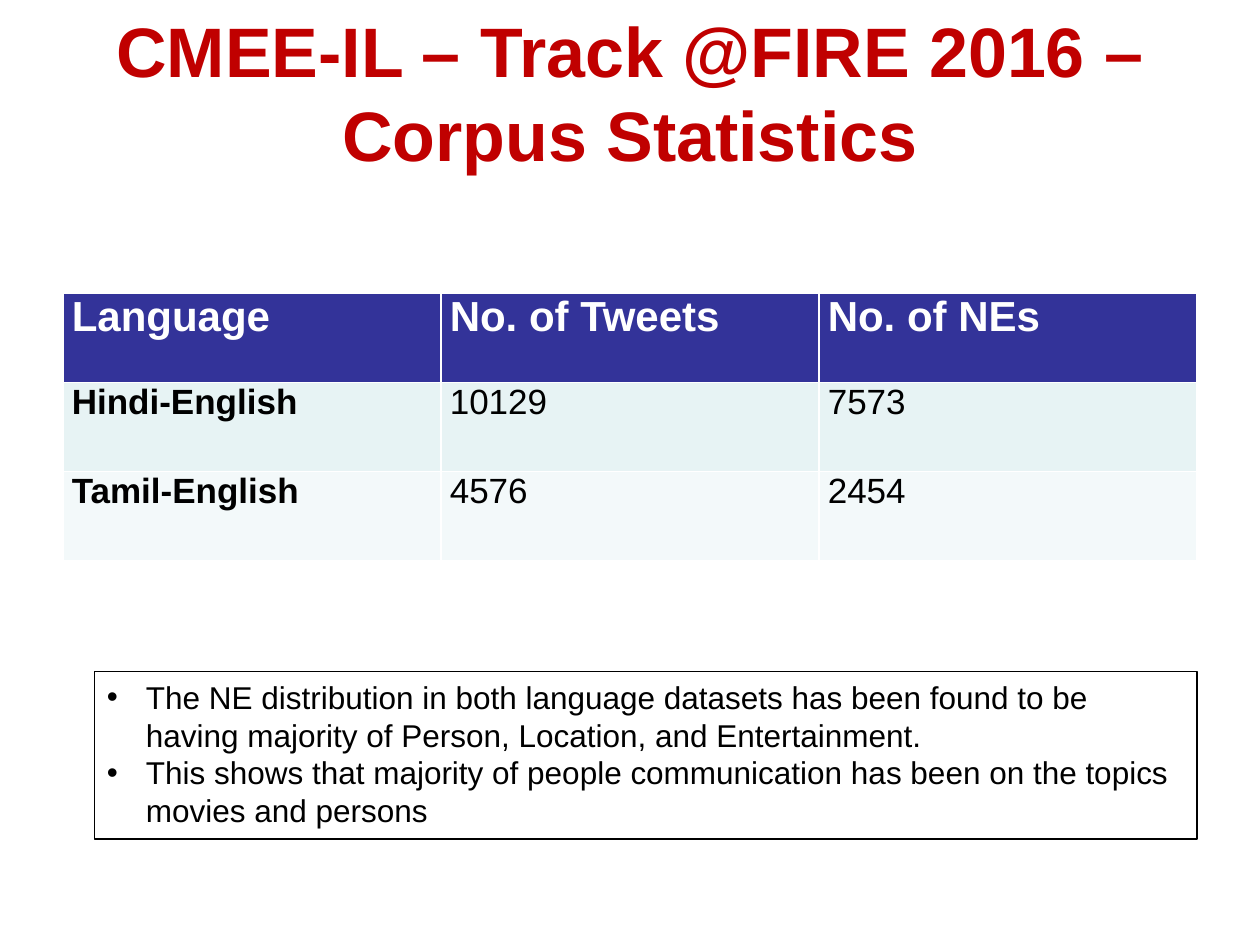
from dataclasses import dataclass

from lxml import etree
from pptx import Presentation
from pptx.dml import color
from pptx.enum import shapes, text
from pptx.oxml import ns
from pptx.util import Inches, Pt


@dataclass(frozen=True)
class Theme:
    font: str = "Arial"
    red: str = "C00000"
    navy: str = "333399"
    white: str = "FFFFFF"
    black: str = "000000"
    bands: tuple = ("E7F3F4", "F3F9FA")
    title: int = 40
    head: int = 24
    cell: int = 20
    note: int = 18


THEME = Theme()
WIDE, HIGH = Inches(10), Inches(7.5)

ROWS = [
    ("Language", "No. of Tweets", "No. of NEs"),
    ("Hindi-English", "10129", "7573"),
    ("Tamil-English", "4576", "2454"),
]
NOTES = [
    "The NE distribution in both language datasets has been found to be "
    "having majority of Person, Location, and Entertainment.",
    "This shows that majority of people communication has been on the topics "
    "movies and persons",
]


def share(left, top, width, height):
    return [int(part * full) for part, full in
            zip((left, top, width, height), (WIDE, HIGH, WIDE, HIGH))]


def apply(item, values):
    for name, value in values.items():
        setattr(item, name, value)


def paint(fill, tone):
    fill.solid()
    fill.fore_color.rgb = color.RGBColor.from_string(tone)


def write(para, words, size, tone, bold=False, align=text.PP_ALIGN.LEFT):
    para.alignment = align
    run = para.add_run()
    run.text = words
    apply(run.font, {"name": THEME.font, "size": Pt(size), "bold": bold})
    run.font.color.rgb = color.RGBColor.from_string(tone)


def add_title(slide, box):
    frame = slide.shapes.add_textbox(*box).text_frame
    apply(frame, {"word_wrap": True, "vertical_anchor": text.MSO_ANCHOR.MIDDLE})
    write(frame.paragraphs[0], "CMEE-IL – Track @FIRE 2016 – Corpus Statistics",
          THEME.title, THEME.red, True, text.PP_ALIGN.CENTER)


def add_stats(slide, box):
    table = slide.shapes.add_table(len(ROWS), len(ROWS[0]), *box).table
    inset = {"margin_left": Inches(0.07), "margin_right": Inches(0.07),
             "margin_top": 0, "margin_bottom": 0}
    for r, row in enumerate(ROWS):
        head = r == 0
        back = THEME.navy if head else THEME.bands[r - 1]
        size = THEME.head if head else THEME.cell
        tone = THEME.white if head else THEME.black
        for c, words in enumerate(row):
            cell = table.cell(r, c)
            apply(cell, inset)
            paint(cell.fill, back)
            write(cell.text_frame.paragraphs[0], words, size, tone,
                  head or c == 0, text.PP_ALIGN.JUSTIFY)


def add_bullet(para):
    props = para._p.get_or_add_pPr()
    indent = Inches(0.31)
    props.set("marL", str(indent))
    props.set("indent", str(-indent))
    font = etree.SubElement(props, ns.qn("a:buFont"))
    font.set("typeface", THEME.font)
    etree.SubElement(props, ns.qn("a:buChar")).set("char", "•")


def add_notes(slide, box):
    panel = slide.shapes.add_shape(shapes.MSO_SHAPE.RECTANGLE, *box)
    panel.shadow.inherit = False
    panel.fill.background()
    paint(panel.line.fill, THEME.black)
    panel.line.width = Pt(0.75)
    frame = panel.text_frame
    apply(frame, {"word_wrap": True, "vertical_anchor": text.MSO_ANCHOR.TOP})
    for i, words in enumerate(NOTES):
        para = frame.add_paragraph() if i else frame.paragraphs[0]
        write(para, words, THEME.note, THEME.black)
        add_bullet(para)


def main():
    deck = Presentation()
    apply(deck, {"slide_width": WIDE, "slide_height": HIGH})
    slide = deck.slides.add_slide(deck.slide_layouts[6])
    paint(slide.background.fill, THEME.white)
    add_title(slide, share(0.05, 0.1 / 7.5, 0.9, 1.25 / 7.5))
    add_stats(slide, share(0.05, 2.33 / 7.5, 0.9, 2.12 / 7.5))
    add_notes(slide, share(0.075, 5.33 / 7.5, 0.875, 1.33 / 7.5))
    deck.save("out.pptx")


if __name__ == "__main__":
    main()
